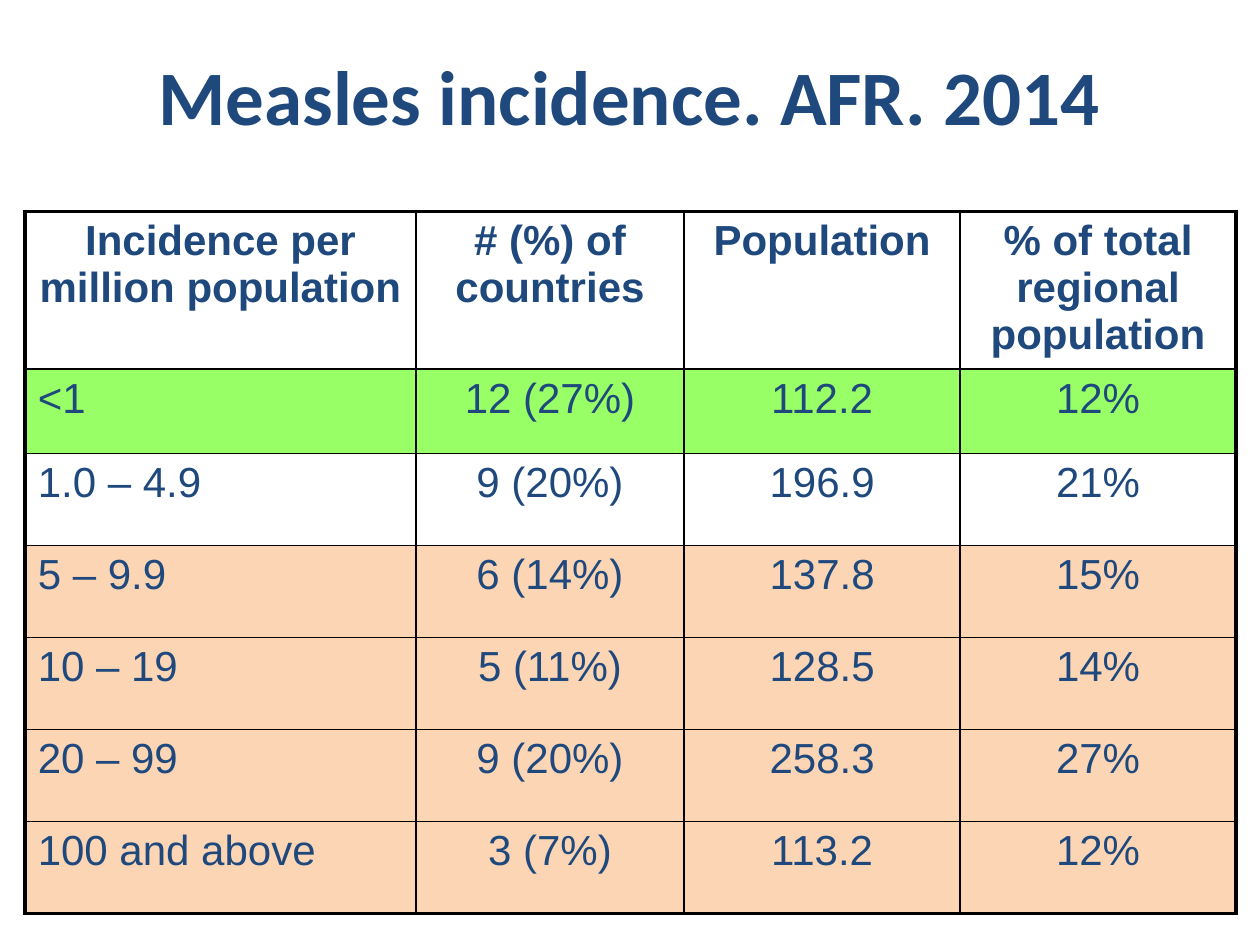
"""Build the slide with the table of measles incidence in AFR, 2014."""
from dataclasses import dataclass

from lxml import etree
from pptx import Presentation
from pptx.dml.color import RGBColor
from pptx.enum.text import MSO_ANCHOR, PP_ALIGN
from pptx.oxml.ns import qn
from pptx.util import Inches, Pt

LEFT = PP_ALIGN.LEFT
CENTER = PP_ALIGN.CENTER
MIDDLE = MSO_ANCHOR.MIDDLE
TITLE_ONLY = 5

NAVY = "1F497D"
BLACK = "000000"
GREEN = "99FF66"
PEACH = "FCD5B5"
OUTER_LINE = Pt(2.25)
INNER_LINE = Pt(1)

COLUMN_WIDTHS = (3.1, 2.13, 2.19, 2.19)
TABLE_LEFT, TABLE_TOP = 0.2, 1.68


@dataclass(frozen=True)
class IncidenceRow:
    texts: tuple[str, str, str, str]
    height: float = 0.73
    fill: str | None = None
    header: bool = False


ROWS = (
    IncidenceRow(("Incidence per million population", "# (%) of countries",
                  "Population", "% of total regional population"),
                 height=1.25, header=True),
    IncidenceRow(("<1", "12 (27%)", "112.2", "12%"), height=0.67, fill=GREEN),
    IncidenceRow(("1.0 – 4.9", "9 (20%)", "196.9", "21%")),
    IncidenceRow(("5 – 9.9", "6 (14%)", "137.8", "15%"), fill=PEACH),
    IncidenceRow(("10 – 19", "5 (11%)", "128.5", "14%"), fill=PEACH),
    IncidenceRow(("20 – 99", "9 (20%)", "258.3", "27%"), fill=PEACH),
    IncidenceRow(("100 and above", "3 (7%)", "113.2", "12%"), fill=PEACH),
)


def rgb(value: str) -> RGBColor:
    """Turn a hex string into a colour."""
    return RGBColor.from_string(value)


def write(frame, text: str, align, **font_values) -> None:
    """Put one formatted paragraph into a text frame."""
    paragraph = frame.paragraphs[0]
    paragraph.alignment = align
    run = paragraph.add_run()
    run.text = text
    run.font.color.rgb = rgb(NAVY)
    for name, value in font_values.items():
        setattr(run.font, name, value)


def set_borders(cell, outer_sides: dict[str, bool]) -> None:
    """Draw the cell borders, heavier on the outer sides of the table."""
    properties = cell._tc.get_or_add_tcPr()
    for side, outer in outer_sides.items():
        width = OUTER_LINE if outer else INNER_LINE
        line = etree.SubElement(properties, qn(f"a:ln{side}"), w=str(int(width)))
        fill = etree.SubElement(line, qn("a:solidFill"))
        etree.SubElement(fill, qn("a:srgbClr"), val=BLACK)


def fill_cell(cell, color: str | None) -> None:
    """Fill the cell, or leave it clear."""
    if color is None:
        cell.fill.background()
    else:
        cell.fill.solid()
        cell.fill.fore_color.rgb = rgb(color)


def add_title(slide, text: str) -> None:
    """Place and format the title."""
    title = slide.shapes.title
    place = {"left": 0.5, "top": 0.13, "width": 9, "height": 1.25}
    for name, value in place.items():
        setattr(title, name, Inches(value))
    title.text_frame.vertical_anchor = MIDDLE
    write(title.text_frame, text, CENTER, name="Calibri", size=Pt(44), bold=True)


def add_incidence_table(slide, rows: tuple[IncidenceRow, ...]) -> None:
    """Add the table of incidence groups."""
    height = sum(row.height for row in rows)
    table = slide.shapes.add_table(
        len(rows), len(COLUMN_WIDTHS), Inches(TABLE_LEFT), Inches(TABLE_TOP),
        Inches(sum(COLUMN_WIDTHS)), Inches(height)).table
    table.first_row = table.horz_banding = False
    for column, width in zip(table.columns, COLUMN_WIDTHS):
        column.width = Inches(width)
    last_row, last_column = len(rows) - 1, len(COLUMN_WIDTHS) - 1
    for r, row in enumerate(rows):
        table.rows[r].height = Inches(row.height)
        for c, text in enumerate(row.texts):
            cell = table.cell(r, c)
            align = CENTER if row.header or c > 0 else LEFT
            write(cell.text_frame, text, align,
                  name="Arial", size=Pt(24), bold=row.header)
            set_borders(cell, {"L": c == 0, "R": c == last_column,
                               "T": r == 0, "B": r == last_row})
            fill_cell(cell, row.fill)


def main() -> None:
    """Build and save the presentation."""
    presentation = Presentation()
    presentation.slide_width = Inches(10)
    presentation.slide_height = Inches(7.5)
    slide = presentation.slides.add_slide(presentation.slide_layouts[TITLE_ONLY])
    add_title(slide, "Measles incidence. AFR. 2014")
    add_incidence_table(slide, ROWS)
    presentation.save("out.pptx")


if __name__ == "__main__":
    main()
